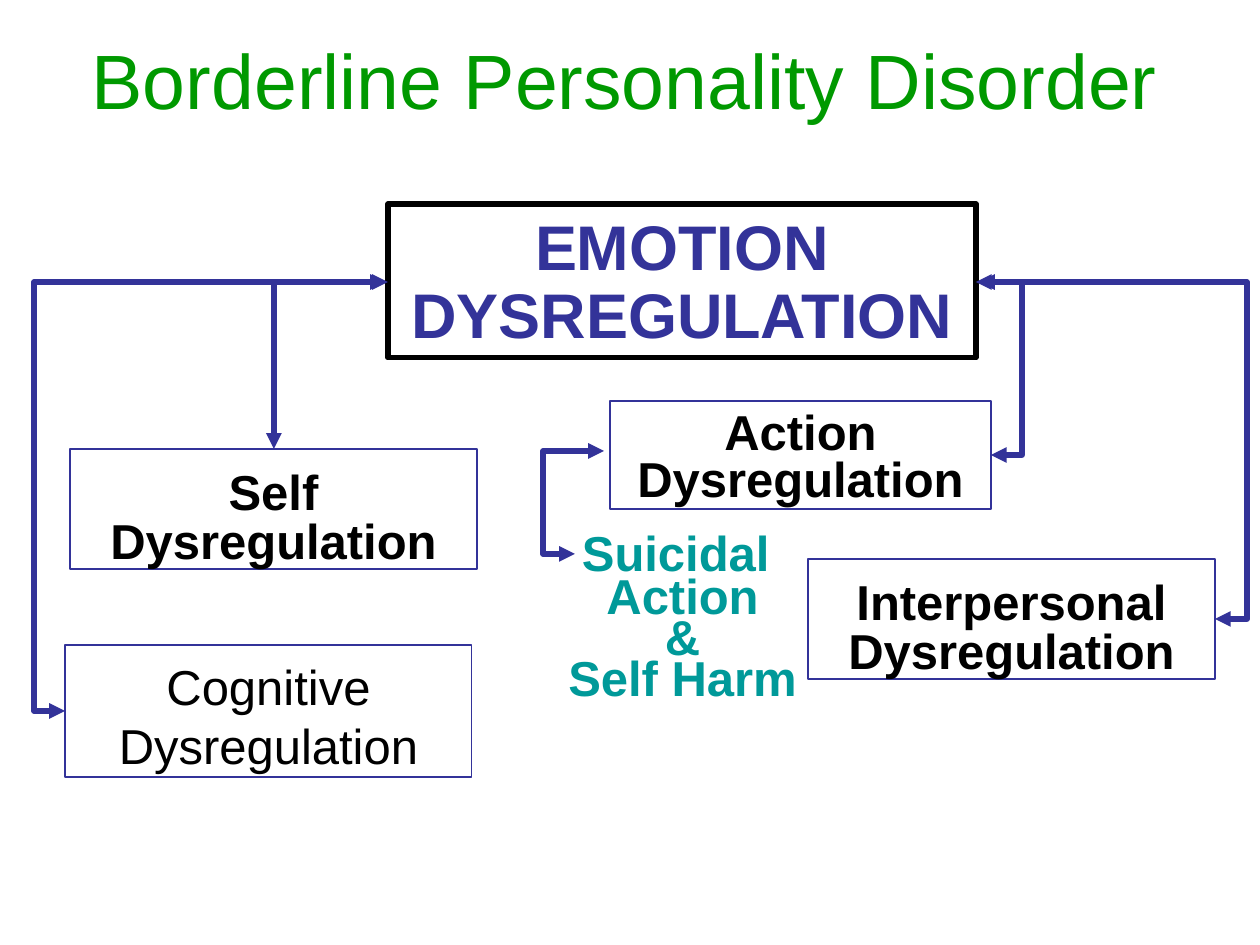
from lxml.etree import SubElement
from pptx import Presentation
from pptx.dml.color import RGBColor
from pptx.enum.shapes import MSO_CONNECTOR, MSO_SHAPE
from pptx.enum.text import MSO_ANCHOR, PP_ALIGN
from pptx.oxml.ns import qn
from pptx.util import Pt

PX = 914400 // 126
COLORS = {
    "title": "009900",
    "indigo": "333399",
    "teal": "009999",
    "black": "000000",
}


def color(name):
    return RGBColor.from_string(COLORS[name])


def write(paragraph, words, size, tint, bold=False, spacing=None):
    paragraph.alignment = PP_ALIGN.CENTER
    if spacing:
        paragraph.line_spacing = spacing
    run = paragraph.add_run()
    run.text = words
    run.font.name = "Arial"
    run.font.size = Pt(size)
    run.font.bold = bold
    run.font.color.rgb = color(tint)


deck = Presentation()
deck.slide_width, deck.slide_height = 1260 * PX, 945 * PX
slide = deck.slides.add_slide(deck.slide_layouts[5])

heading = slide.shapes.title
heading.left, heading.top, heading.width, heading.height = (
    v * PX for v in (63, 0, 1124, 158))
heading.text_frame.vertical_anchor = MSO_ANCHOR.MIDDLE
write(heading.text_frame.paragraphs[0], "Borderline Personality Disorder", 44, "title")

boxes = [
    ((388, 204, 588, 154), "black", 3, 36, "indigo", True,
     [("EMOTION DYSREGULATION", 0.9)]),
    ((65, 645, 407, 132), "indigo", 0.75, 28, "black", False,
     [("Cognitive Dysregulation", None)]),
    ((610, 401, 381, 108), "indigo", 0.75, 28, "black", True,
     [("Action Dysregulation", 0.8)]),
    ((70, 449, 407, 120), "indigo", 0.75, 28, "black", True,
     [("Self", None), ("Dysregulation", 0.85)]),
    ((808, 559, 407, 120), "indigo", 0.75, 28, "black", True,
     [("Interpersonal", None), ("Dysregulation", 0.85)]),
    ((604, 552, 157, 123), None, 0, 28, "teal", True,
     [("Suicidal ", None), ("Action", 0.7), ("&", 0.7), ("Self Harm", 0.7)]),
]
for place, border, weight, size, tint, bold, lines in boxes:
    preset = MSO_SHAPE.RECTANGLE if border else MSO_SHAPE.FLOWCHART_PROCESS
    box = slide.shapes.add_shape(preset, *(v * PX for v in place))
    box.shadow.inherit = False
    box.fill.background()
    frame = box.text_frame
    if border:
        box.line.color.rgb = color(border)
        box.line.width = Pt(weight)
        frame.word_wrap = True
        frame.vertical_anchor = MSO_ANCHOR.TOP
        frame.margin_top = 12 * PX
    else:
        box.line.fill.background()
        frame.word_wrap = False
        frame.vertical_anchor = MSO_ANCHOR.MIDDLE
    for i, (words, spacing) in enumerate(lines):
        paragraph = frame.add_paragraph() if i else frame.paragraphs[0]
        write(paragraph, words, size, tint, bold, spacing)

links = [
    ((388, 282), (65, 711), 34),
    ((979, 282), (1215, 619), 1247),
    ((976, 282), (991, 455), 1022),
    ((386, 282), (274, 449), None),
    ((604, 451), (575, 554), 543),
]
for start, end, bend in links:
    link = slide.shapes.add_connector(
        MSO_CONNECTOR.ELBOW, *(v * PX for v in start + end))
    link.line.color.rgb = color("indigo")
    link.line.width = Pt(3)
    properties = link._element.spPr
    geometry = properties.find(qn("a:prstGeom"))
    if bend is None:
        geometry.set("prst", "bentConnector2")
    else:
        ratio = round((bend - start[0]) / (end[0] - start[0]) * 100000)
        guides = geometry.find(qn("a:avLst"))
        SubElement(guides, qn("a:gd"), name="adj1", fmla=f"val {ratio}")
    outline = link.line._get_or_add_ln()
    for tip in ("a:headEnd", "a:tailEnd"):
        SubElement(outline, qn(tip), type="triangle")
    SubElement(properties, qn("a:effectLst"))

deck.save("out.pptx")
